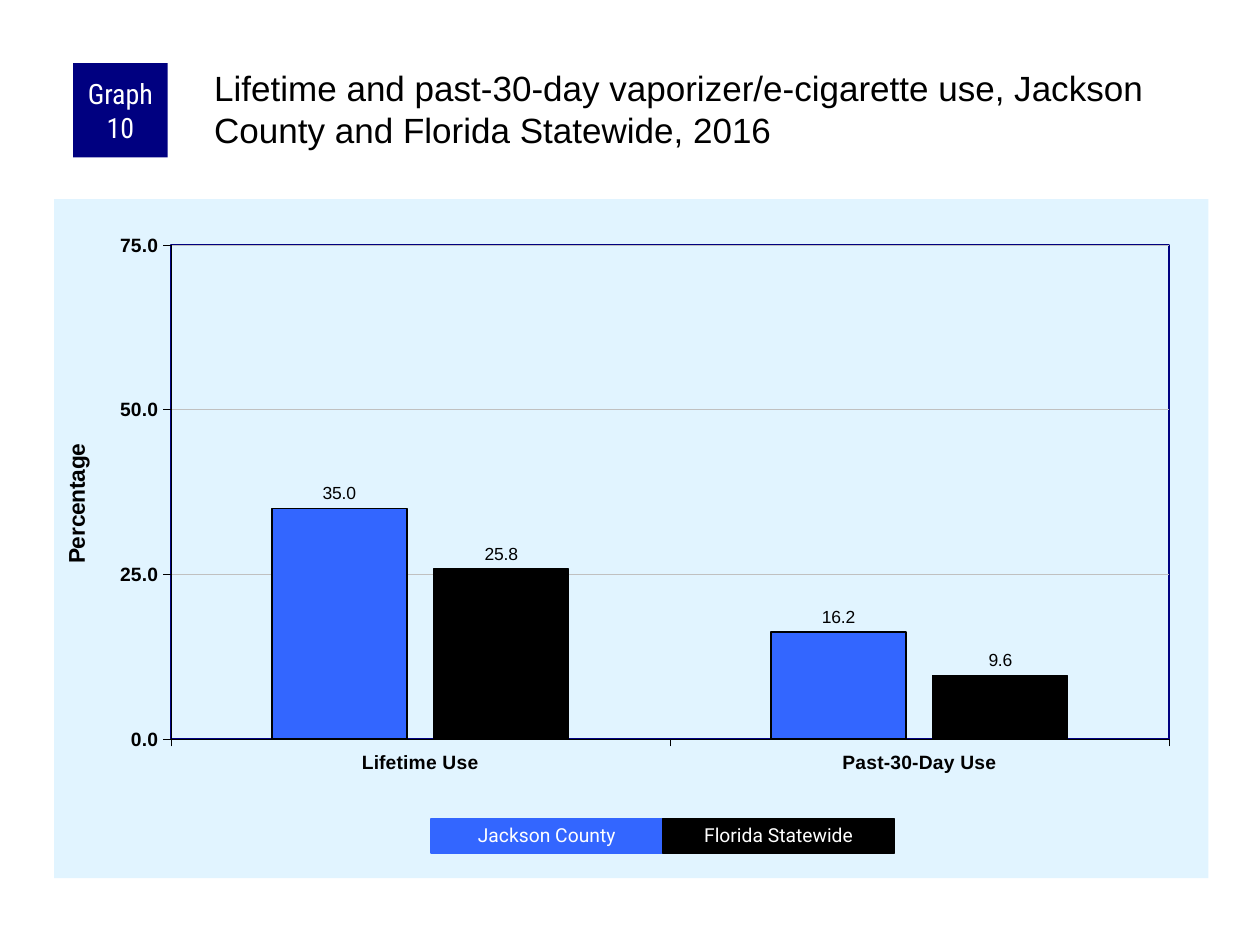
from lxml import etree
from pptx import Presentation
from pptx import util as u
from pptx.chart.data import CategoryChartData
from pptx.dml.color import RGBColor
from pptx.enum import chart as charts, shapes, text
from pptx.oxml import parse_xml
from pptx.oxml.ns import nsdecls, qn

PX = 9144
WHITE = RGBColor(0xFF, 0xFF, 0xFF)
BLACK = RGBColor(0, 0, 0)
NAVY = RGBColor(0, 0, 0x80)
BLUE = RGBColor(0x33, 0x66, 0xFF)
PALE = RGBColor(0xE1, 0xF4, 0xFF)
GREY = RGBColor(0xC0, 0xC0, 0xC0)

TITLE = ("Lifetime and past-30-day vaporizer/e-cigarette use, "
         "Jackson County and Florida Statewide, 2016")
CATEGORIES = ["Lifetime Use", "Past-30-Day Use"]
SERIES = [("Jackson County", (35.0, 16.2), BLUE, 1),
          ("Florida Statewide", (25.8, 9.6), BLACK, 0.75)]


def emu(*lengths):
    """Turn px lengths into EMU."""
    return [length * PX for length in lengths]


def set_font(font, name, size, color, bold=False):
    """Format a font."""
    font.name, font.size, font.bold = name, u.Pt(size), bold
    font.color.rgb = color


def set_line(line, color, width):
    """Give a line its colour and width in points."""
    line.color.rgb = color
    line.width = u.Pt(width)


def set_margins(frame, left, top, right, bottom):
    """Set the insets of a text frame in px."""
    (frame.margin_left, frame.margin_top,
     frame.margin_right, frame.margin_bottom) = emu(left, top, right, bottom)


def add_label(page, box, words, fill, font_name, size):
    """Add a filled rectangle with centred white text."""
    label = page.shapes.add_shape(shapes.MSO_SHAPE.RECTANGLE, *emu(*box))
    label.shadow.inherit = False
    label.fill.solid()
    label.fill.fore_color.rgb = fill
    label.line.fill.background()
    frame = label.text_frame
    frame.word_wrap = True
    frame.vertical_anchor = text.MSO_ANCHOR.MIDDLE
    set_margins(frame, 5, 0, 5, 0)
    para = frame.paragraphs[0]
    para.text = words
    para.alignment = text.PP_ALIGN.CENTER
    set_font(para.font, font_name, size, WHITE)
    return label


def add_header(page, box):
    """Place the graph number and the title side by side."""
    left, top, width, height = box
    add_label(page, (left, top, 75, 75), "Graph 10", NAVY, "Roboto Condensed", 16)
    title = page.shapes.title
    title.left, title.top, title.width, title.height = emu(
        left + 109, top, width - 109, height)
    frame = title.text_frame
    frame.word_wrap = True
    frame.auto_size = text.MSO_AUTO_SIZE.NONE
    frame.vertical_anchor = text.MSO_ANCHOR.TOP
    set_margins(frame, 3, 3, 0, 0)
    para = frame.paragraphs[0]
    para.text = TITLE
    para.alignment = text.PP_ALIGN.LEFT
    set_font(para.font, "Arial", 20, BLACK)


def style_areas(chart):
    """Fill the chart area, outline the plot and fix its inner layout."""
    chart_part = chart._chartSpace.find(qn("c:chart"))
    chart_part.addnext(parse_xml(
        f'<c:spPr {nsdecls("c", "a")}><a:solidFill><a:srgbClr val="{PALE}"/>'
        '</a:solidFill><a:ln><a:noFill/></a:ln></c:spPr>'))
    plot_area = chart_part.find(qn("c:plotArea"))
    plot_area.append(parse_xml(
        f'<c:spPr {nsdecls("c", "a")}><a:noFill/><a:ln w="12700"><a:solidFill>'
        f'<a:srgbClr val="{NAVY}"/></a:solidFill></a:ln></c:spPr>'))
    for old in plot_area.findall(qn("c:layout")):
        plot_area.remove(old)
    layout = etree.Element(qn("c:layout"))
    manual = etree.SubElement(layout, qn("c:manualLayout"))
    settings = {"layoutTarget": "inner", "xMode": "edge", "yMode": "edge",
                "x": "0.1", "y": "0.07", "w": "0.87", "h": "0.73"}
    settings.update(x="0.101", y="0.068", w="0.865", h="0.727")
    for name, value in settings.items():
        etree.SubElement(manual, qn(f"c:{name}")).set("val", value)
    plot_area.insert(0, layout)


def style_axes(chart):
    """Format both axes, the gridlines and the axis title."""
    for axis in (chart.category_axis, chart.value_axis):
        axis.major_tick_mark = charts.XL_TICK_MARK.OUTSIDE
        axis.minor_tick_mark = charts.XL_TICK_MARK.NONE
        set_font(axis.tick_labels.font, "Arial", 11, BLACK, True)
        set_line(axis.format.line, BLACK, 0.25)
    values = chart.value_axis
    values.minimum_scale, values.maximum_scale, values.major_unit = 0, 75, 25
    set_line(values.major_gridlines.format.line, GREY, 0.25)
    para = values.axis_title.text_frame.paragraphs[0]
    para.text = "Percentage"
    set_font(para.font, "Arial", 13, BLACK, True)


def add_bars(page, box):
    """Add the clustered column chart."""
    data = CategoryChartData(number_format="0.0")
    data.categories = CATEGORIES
    for name, values, _, _ in SERIES:
        data.add_series(name, values)
    chart = page.shapes.add_chart(
        charts.XL_CHART_TYPE.COLUMN_CLUSTERED, *emu(*box), data).chart
    chart.has_title = chart.has_legend = False
    set_font(chart.font, "Arial", 11.5, BLACK)
    style_areas(chart)
    style_axes(chart)
    plot = chart.plots[0]
    plot.gap_width, plot.overlap, plot.vary_by_categories = 150, -20, False
    for series, (_, _, color, width) in zip(plot.series, SERIES):
        series.format.fill.solid()
        series.format.fill.fore_color.rgb = color
        set_line(series.format.line, BLACK, width)
        labels = series.data_labels
        labels.show_value = True
        labels.number_format, labels.number_format_is_linked = "0.0", False
        labels.position = charts.XL_LABEL_POSITION.OUTSIDE_END
        set_font(labels.font, "Arial", 10, BLACK)


def add_key(page, box):
    """Share the box equally among the series labels."""
    left, top, width, height = box
    step = width // len(SERIES)
    for index, (name, _, color, _) in enumerate(SERIES):
        chip = add_label(page, (left + index * step, top, step, height),
                         name, color, "Roboto", 11)
        set_line(chip.line, color, 0.75)
        chip.text_frame.paragraphs[0].line_spacing = 0.9


def main():
    """Build and save the slide."""
    deck = Presentation()
    deck.slide_width, deck.slide_height = emu(1000, 750)
    page = deck.slides.add_slide(deck.slide_layouts[5])
    add_bars(page, (43, 158, 916, 539))
    add_header(page, (58, 50, 901, 83))
    add_key(page, (342, 650, 368, 27))
    deck.save("out.pptx")


if __name__ == "__main__":
    main()
